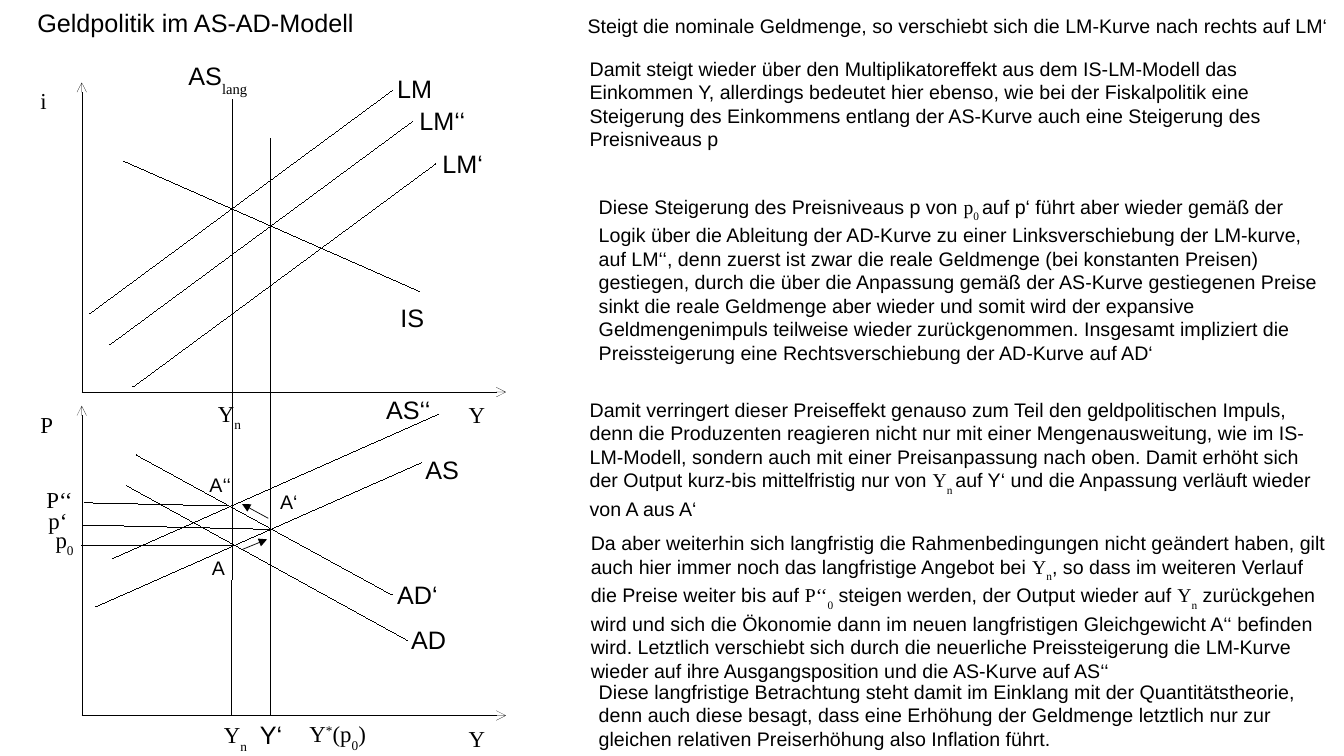
import pptx
import pptx.dml.color
import pptx.enum.shapes
import pptx.enum.text
import pptx.oxml
import pptx.oxml.ns
import pptx.util
from pptx.util import Cm, Pt

COLORS = {"ink": "000000", "paper": "FFFFFF"}
FONTS = {"sans": "Arial", "serif": "Times New Roman", "sub": "Times New Roman", "sup": "Times New Roman"}
BASELINES = {"sub": "-33000", "sup": "33000"}
LABEL_HEIGHTS = {18: 0.97, 16.3: 0.89, 14: 0.81}

AXIS_X, AXIS_LENGTH_X, AXIS_LENGTH_Y = 2.06, 10.69, 7.8
ORIGINS_Y = (9.88, 18.03)

LM_SHIFT, AS_SHIFT = (7.62, -5.62), (8.2, -3.63)
CURVES = [
    (2.26, 7.9, *LM_SHIFT),
    (2.77, 8.68, *LM_SHIFT),
    (3.35, 9.75, *LM_SHIFT),
    (3.12, 4.06, 7.45, 3.28),
    (2.41, 15.29, *AS_SHIFT),
    (2.84, 14.07, *AS_SHIFT),
    (3.2, 12.24, 7.06, 3.89),
    (3.43, 11.46, 6.45, 3.53),
]
GUIDES = [
    (5.87, 2.51, -0.03, 15.52),
    (6.81, 3.48, 0, 14.55),
    (5.84, 13.74, -3.78, 0),
    (6.81, 13.34, -4.7, -0.11),
    (5.74, 12.75, -3.61, -0.08),
]
MOVES = [(6.12, 13.84, 0.61, -0.25), (6.76, 13.06, -0.66, -0.36)]

SANS_LABELS = [
    (0.71, 0.08, 8.51, 18, "Geldpolitik im AS-AD-Modell"),
    (9.78, 1.73, 1.35, 18, "LM"),
    (10.34, 2.54, 1.63, 18, "LM‘‘"),
    (10.92, 3.63, 1.5, 18, "LM‘"),
    (9.86, 7.52, 1.07, 18, "IS"),
    (9.5, 9.83, 1.57, 18, "AS‘‘"),
    (10.49, 11.33, 1.32, 18, "AS"),
    (9.78, 14.48, 1.5, 18, "AD‘"),
    (10.13, 15.62, 1.35, 18, "AD"),
    (6.32, 18.01, 1.02, 18, "Y‘"),
    (6.83, 12.24, 0.89, 14, "A‘"),
    (5.11, 13.89, 0.79, 14, "A"),
    (5.05, 11.81, 0.99, 14, "A‘‘"),
]
SERIF_LABELS = [
    (0.79, 2.08, 0.61, [("i", "serif")]),
    (11.58, 9.98, 0.89, [("Y", "serif")]),
    (5.26, 9.96, 1.07, [("Y", "serif"), ("n", "sub")]),
    (0.79, 10.24, 0.79, [("P", "serif")]),
    (11.58, 18.14, 0.89, [("Y", "serif")]),
    (5.41, 18.06, 1.07, [("Y", "serif"), ("n", "sub")]),
    (7.57, 18.03, 1.96,
     [("Y", "serif"), ("*", "sup"), ("(p", "serif"), ("0", "sub"), (")", "serif")]),
    (1.17, 13.13, 0.94, [("p", "serif"), ("0", "sub")]),
    (0.99, 12.65, 0.94, [("p‘", "serif")]),
]
EXPLANATIONS = [
    (14.58, 0.23, 19.3, 0.81, [
        ("Steigt die nominale Geldmenge, so verschiebt sich die LM-Kurve nach rechts auf LM‘", "sans")]),
    (14.63, 1.32, 18.87, 2.54, [
        ("Damit steigt wieder über den Multiplikatoreffekt aus dem IS-LM-Modell das Einkommen Y, "
         "allerdings bedeutet hier ebenso, wie bei der Fiskalpolitik eine Steigerung des Einkommens "
         "entlang der AS-Kurve auch eine Steigerung des Preisniveaus p", "sans")]),
    (14.86, 4.8, 18.87, 4.42, [
        ("Diese Steigerung des Preisniveaus p von ", "sans"), ("p", "serif"), ("0 ", "sub"),
        ("auf p‘ führt aber wieder gemäß der Logik über die Ableitung der AD-Kurve zu einer "
         "Linksverschiebung der LM-kurve, auf LM‘‘, denn zuerst ist zwar die reale Geldmenge (bei "
         "konstanten Preisen) gestiegen, durch die über die Anpassung gemäß der AS-Kurve gestiegenen "
         "Preise sinkt die reale Geldmenge aber wieder und somit wird der expansive "
         "Geldmengenimpuls teilweise wieder zurückgenommen. Insgesamt impliziert die "
         "Preissteigerung eine Rechtsverschiebung der AD-Kurve auf AD‘", "sans")]),
    (14.63, 9.91, 19.1, 2.62, [
        ("Damit verringert dieser Preiseffekt genauso zum Teil den geldpolitischen Impuls, denn die "
         "Produzenten reagieren nicht nur mit einer Mengenausweitung, wie im IS-LM-Modell, sondern "
         "auch mit einer Preisanpassung nach oben. Damit erhöht sich der Output kurz-bis "
         "mittelfristig nur von ", "sans"), ("Y", "serif"), ("n ", "sub"),
        ("auf Y‘ und die Anpassung verläuft wieder von A aus A‘", "sans")]),
    (14.66, 13.28, 19.1, 3.61, [
        ("Da aber weiterhin sich langfristig die Rahmenbedingungen nicht geändert haben, gilt auch "
         "hier immer noch das langfristige Angebot bei ", "sans"), ("Y", "serif"), ("n", "sub"),
        (", so dass im weiteren Verlauf die Preise weiter bis auf ", "sans"),
        ("P‘‘", "serif"), ("0", "sub"),
        (" steigen werden, der Output wieder auf ", "sans"), ("Y", "serif"), ("n", "sub"),
        (" zurückgehen wird und sich die Ökonomie dann im neuen langfristigen Gleichgewicht A‘‘ "
         "befinden wird. Letztlich verschiebt sich durch die neuerliche Preissteigerung die LM-Kurve "
         "wieder auf ihre Ausgangsposition und die AS-Kurve auf AS‘‘", "sans")]),
    (14.86, 17.02, 19.1, 0.99, [
        ("Diese langfristige Betrachtung steht damit im Einklang mit der Quantitätstheorie, denn auch "
         "diese besagt, dass eine Erhöhung der Geldmenge letztlich nur zur gleichen relativen "
         "Preiserhöhung also Inflation führt.", "sans")]),
]


def add_line(page, x, y, dx, dy, width=0, head=None):
    """Draw a line from a start point by a shift, with an optional arrowhead."""
    line = page.shapes.add_connector(
        pptx.enum.shapes.MSO_CONNECTOR.STRAIGHT, Cm(x), Cm(y), Cm(x + dx), Cm(y + dy))
    line.line.color.rgb = pptx.dml.color.RGBColor.from_string(COLORS["ink"])
    outline = line._element.spPr.find(pptx.oxml.ns.qn("a:ln"))
    outline.set("w", str(int(Pt(width))))
    if head:
        tail = pptx.oxml.parse_xml(
            f'<a:tailEnd {pptx.oxml.ns.nsdecls("a")} type="{head}"/>')
        outline.append(tail)
    effects = pptx.oxml.parse_xml(f'<a:effectLst {pptx.oxml.ns.nsdecls("a")}/>')
    line._element.spPr.append(effects)


def add_text(page, x, y, width, height, size, spans, wrap=False):
    """Place a text box whose spans are pairs of wording and style."""
    box = page.shapes.add_textbox(Cm(x), Cm(y), Cm(width), Cm(height))
    frame = box.text_frame
    frame.word_wrap = wrap
    frame.margin_left = Cm(0.23)
    frame.margin_right = Cm(0.23 if wrap else 0.1)
    frame.margin_top = frame.margin_bottom = Cm(0.11)
    if not wrap:
        frame.auto_size = pptx.enum.text.MSO_AUTO_SIZE.SHAPE_TO_FIT_TEXT
    para = frame.paragraphs[0]
    for wording, style in spans:
        span = para.add_run()
        span.text = wording
        span.font.name = FONTS[style]
        span.font.size = Pt(size)
        span.font.color.rgb = pptx.dml.color.RGBColor.from_string(COLORS["ink"])
        if style in BASELINES:
            span.font._element.set("baseline", BASELINES[style])


def add_axes(page, origin_y):
    """Draw the two axes of one diagram."""
    add_line(page, AXIS_X, origin_y, 0, -AXIS_LENGTH_Y, head="arrow")
    add_line(page, AXIS_X, origin_y, AXIS_LENGTH_X, 0, head="arrow")


def main():
    """Build the slide and save it."""
    deck = pptx.Presentation()
    deck.slide_width, deck.slide_height = Cm(33.87), Cm(19.05)
    page = deck.slides.add_slide(deck.slide_layouts[6])
    page.background.fill.solid()
    page.background.fill.fore_color.rgb = pptx.dml.color.RGBColor.from_string(COLORS["paper"])
    for origin_y in ORIGINS_Y:
        add_axes(page, origin_y)
    for line in CURVES + GUIDES:
        add_line(page, *line)
    for move in MOVES:
        add_line(page, *move, width=0.5, head="triangle")
    for x, y, width, size, wording in SANS_LABELS:
        add_text(page, x, y, width, LABEL_HEIGHTS[size], size, [(wording, "sans")])
    for x, y, width, spans in SERIF_LABELS:
        add_text(page, x, y, width, LABEL_HEIGHTS[16.3], 16.3, spans)
    add_text(page, 0.94, 12.14, 1.75, LABEL_HEIGHTS[16.3], 16.3, [("P‘‘", "serif")], wrap=True)
    add_text(page, 4.52, 1.42, 2.06, LABEL_HEIGHTS[18], 18, [("AS", "sans"), ("lang", "sub")])
    for x, y, width, height, spans in EXPLANATIONS:
        add_text(page, x, y, width, height, 14, spans, wrap=True)
    deck.save("out.pptx")


if __name__ == "__main__":
    main()
